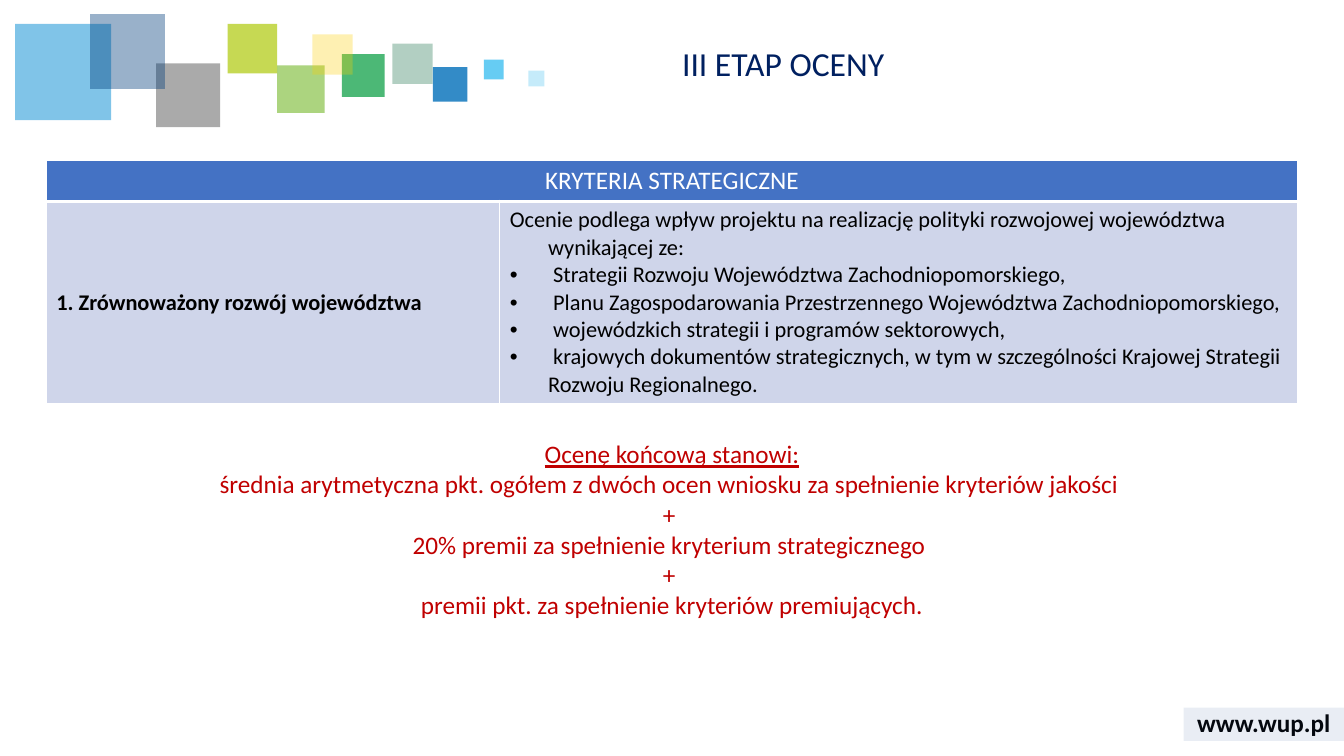
from dataclasses import dataclass
from typing import NamedTuple

from pptx import Presentation
from pptx.dml.color import RGBColor as Rgb
from pptx.enum.shapes import MSO_SHAPE as Shape
from pptx.enum.text import MSO_ANCHOR as Anchor, MSO_AUTO_SIZE as Fit, PP_ALIGN as Align
from pptx.oxml.ns import qn
from pptx.util import Emu, Inches, Pt
from lxml.etree import SubElement as Sub


@dataclass(frozen=True)
class Theme:
    font: str = "Calibri"
    title: str = "002060"
    head: str = "4472C4"
    cell: str = "CFD5EA"
    light: str = "FFFFFF"
    dark: str = "000000"
    accent: str = "C00000"
    strip: str = "2F5597"
    large: int = 24
    mid: int = 18
    small: int = 16


class Box(NamedTuple):
    left: float
    top: float
    wide: float
    high: float


class Tile(NamedTuple):
    box: Box
    fill: str
    alpha: int


class Style(NamedTuple):
    size: int
    color: str
    bold: bool = False
    under: bool = False


LOOK = Theme()
COLS, ROWS = 160, 90
WIDE, HIGH = Inches(13.333), Inches(7.5)
HANG = Inches(0.38)


def square(left: float, top: float, side: float, fill: str, alpha: int) -> Tile:
    return Tile(Box(left, top, side, side), fill, alpha)


TILES = [
    square(46.7, 5.2, 4.8, "006138", 30),
    square(51.55, 8, 4.1, "006EB9", 80),
    square(40.7, 6.45, 5.1, "009A3C", 70),
    square(1.8, 2.85, 11.45, "028BD3", 50),
    square(33, 7.8, 5.65, "75B82A", 60),
    square(18.6, 7.55, 7.6, "575757", 50),
    square(10.75, 1.7, 8.9, "003D7C", 40),
    square(57.6, 7.1, 2.35, "40C0F1", 80),
    square(27.1, 2.85, 5.9, "AFCA0B", 70),
    square(37.2, 4.1, 4.8, "FED000", 30),
    square(62.9, 8.4, 1.9, "40C0F1", 30),
    Tile(Box(140.9, 84.25, 19.1, 3.95), LOOK.strip, 10),
]

SITE = Box(140.9, 83.65, 19.1, 4.8)
TITLE = Box(80, 5.05, 76.3, 6.6)
GRID = Box(5.5, 19.1, 149, 28.9)
FINAL = Box(5.5, 51.6, 149, 23)
SPLIT = (54, 95)
TIERS = (4.9, 24)

INTRO = "Ocenie podlega wpływ projektu na realizację polityki rozwojowej województwa wynikającej ze:"
POINTS = [
    " Strategii Rozwoju Województwa Zachodniopomorskiego,",
    " Planu Zagospodarowania Przestrzennego Województwa Zachodniopomorskiego,",
    " wojewódzkich strategii i programów sektorowych,",
    " krajowych dokumentów strategicznych, w tym w szczególności Krajowej Strategii Rozwoju Regionalnego.",
]
SCORE = [
    "Ocenę końcową stanowi:",
    "średnia arytmetyczna pkt. ogółem z dwóch ocen wniosku za spełnienie kryteriów jakości ",
    "+ ",
    "20% premii za spełnienie kryterium strategicznego ",
    "+ ",
    "premii pkt. za spełnienie kryteriów premiujących.",
]


def across(cols: float) -> Emu:
    return Emu(round(WIDE * cols / COLS))


def down(rows: float) -> Emu:
    return Emu(round(HIGH * rows / ROWS))


def place(box: Box) -> tuple[Emu, Emu, Emu, Emu]:
    return across(box.left), down(box.top), across(box.wide), down(box.high)


def move(item, box: Box) -> None:
    item.left, item.top, item.width, item.height = place(box)


def write(para, text: str, style: Style, align=Align.LEFT) -> None:
    para.alignment = align
    run = para.add_run()
    run.text = text
    font = run.font
    font.name, font.size = LOOK.font, Pt(style.size)
    font.bold, font.underline = style.bold, style.under
    font.color.rgb = Rgb.from_string(style.color)


def indent(para, hang: int, mark: str = "") -> None:
    props = para._p.get_or_add_pPr()
    props.set("marL", str(hang))
    props.set("indent", str(-hang))
    if mark:
        Sub(props, qn("a:buFont")).set("typeface", "Arial")
        Sub(props, qn("a:buChar")).set("char", mark)
    else:
        Sub(props, qn("a:buNone"))


def lines(frame, count: int) -> list:
    return [frame.paragraphs[0]] + [frame.add_paragraph() for _ in range(count - 1)]


def settle(frame, anchor) -> None:
    frame.word_wrap = True
    frame.auto_size = Fit.NONE
    frame.vertical_anchor = anchor


def draw(shapes, tile: Tile) -> None:
    item = shapes.add_shape(Shape.RECTANGLE, *place(tile.box))
    item.shadow.inherit = False
    item.line.fill.background()
    item.fill.solid()
    item.fill.fore_color.rgb = Rgb.from_string(tile.fill)
    tint = item.fill._xPr.find(".//" + qn("a:srgbClr"))
    Sub(tint, qn("a:alpha")).set("val", str(tile.alpha * 1000))


def paint(cell, fill: str, base: int) -> None:
    props = cell._tc.get_or_add_tcPr()
    for side, width in (("L", 1), ("R", 1), ("T", 1), ("B", base)):
        edge = Sub(props, qn("a:ln" + side))
        edge.set("w", str(Pt(width)))
        Sub(Sub(edge, qn("a:solidFill")), qn("a:srgbClr")).set("val", LOOK.light)
    cell.fill.solid()
    cell.fill.fore_color.rgb = Rgb.from_string(fill)


def chart_rules(shapes) -> None:
    table = shapes.add_table(len(TIERS), len(SPLIT), *place(GRID)).table
    for col, span in zip(table.columns, SPLIT):
        col.width = across(span)
    for row, span in zip(table.rows, TIERS):
        row.height = down(span)
    for row, fill, base in zip(table.rows, (LOOK.head, LOOK.cell), (3, 1)):
        for cell in row.cells:
            paint(cell, fill, base)
    head, name, text = table.cell(0, 0), table.cell(1, 0), table.cell(1, 1)
    head.merge(table.cell(0, 1))
    write(head.text_frame.paragraphs[0], "KRYTERIA STRATEGICZNE", Style(LOOK.mid, LOOK.light), Align.CENTER)
    name.vertical_anchor = Anchor.MIDDLE
    write(name.text_frame.paragraphs[0], "1. Zrównoważony rozwój województwa",
          Style(LOOK.small, LOOK.dark, bold=True))
    items = [INTRO, *POINTS]
    for spot, (para, item) in enumerate(zip(lines(text.text_frame, len(items)), items)):
        indent(para, HANG, "•" if spot else "")
        write(para, item, Style(LOOK.small, LOOK.dark))


def main() -> None:
    deck = Presentation()
    deck.slide_width, deck.slide_height = WIDE, HIGH
    slide = deck.slides.add_slide(deck.slide_layouts[1])
    shapes = slide.shapes

    site = shapes.add_textbox(*place(SITE)).text_frame
    settle(site, Anchor.MIDDLE)
    write(site.paragraphs[0], "www.wup.pl", Style(LOOK.mid, LOOK.dark, bold=True), Align.CENTER)
    for tile in TILES:
        draw(shapes, tile)
    chart_rules(shapes)

    title, body = shapes.title, slide.placeholders[1]
    move(title, TITLE)
    settle(title.text_frame, Anchor.TOP)
    para = title.text_frame.paragraphs[0]
    para.line_spacing = 0.9
    write(para, "III ETAP OCENY", Style(LOOK.large, LOOK.title))

    move(body, FINAL)
    settle(body.text_frame, Anchor.TOP)
    for spot, (para, text) in enumerate(zip(lines(body.text_frame, len(SCORE)), SCORE)):
        indent(para, 0)
        para.space_before = Pt(0)
        write(para, text, Style(LOOK.mid, LOOK.accent, under=spot == 0), Align.CENTER)

    deck.save("out.pptx")


if __name__ == "__main__":
    main()
